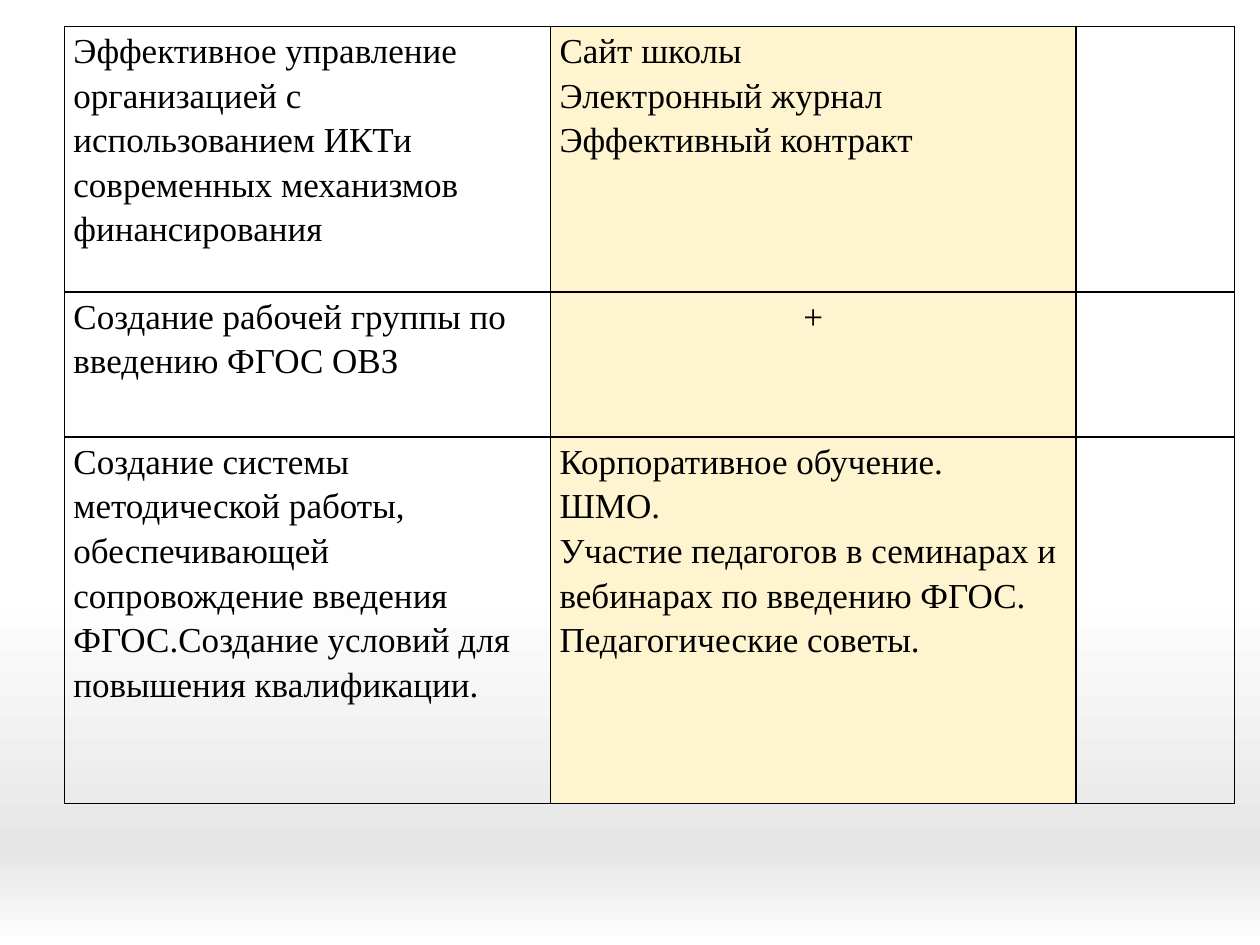
from lxml.etree import SubElement
from pptx import Presentation
from pptx.dml.color import RGBColor as Color
from pptx.enum.text import PP_ALIGN as Align
from pptx.oxml.ns import qn
from pptx.util import Cm, Pt

COLORS = {"text": "000000", "border": "000000", "cream": "FEF4CF",
          "white": "FFFFFF", "grey": "E6E6E6"}
FONT = {"name": "Times New Roman", "size": Pt(20), "bold": False}
MARGINS = {"margin_left": Cm(0.18), "margin_right": Cm(0.18),
           "margin_top": 0, "margin_bottom": 0}
TABLE_FLAGS = {"first_row": False, "horz_banding": False}
GRADIENT = [(0, "white"), (62, "white"), (90, "grey"), (100, "white")]
COLUMN_WIDTHS = [9.8, 10.59, 3.2]
ROW_HEIGHTS = [5.36, 2.92, 7.39]
ROWS = [
    (["Эффективное управление организацией с использованием ИКТи "
      "современных механизмов финансирования"],
     ["Сайт школы", "Электронный журнал", "Эффективный контракт"], []),
    (["Создание рабочей группы по введению ФГОС ОВЗ"], ["+"], []),
    (["Создание системы методической работы, обеспечивающей сопровождение "
      "введения ФГОС.Создание условий для повышения квалификации."],
     ["Корпоративное обучение.", "ШМО.",
      "Участие педагогов в семинарах и вебинарах по введению ФГОС.",
      "Педагогические советы."], []),
]


def apply(target, values):
    """Set every attribute in values on the target."""
    for name, value in values.items():
        setattr(target, name, value)


def add_color(parent, color):
    """Append a named palette colour to an XML element."""
    SubElement(parent, qn("a:srgbClr"), val=COLORS[color])


def paint_background(slide):
    """Give the slide its vertical gradient."""
    fill = slide.background.fill
    fill.gradient()
    fill.gradient_angle = 270
    stops = next(slide.element.iter(qn("a:gsLst")))
    for stop in list(stops):
        stops.remove(stop)
    for position, color in GRADIENT:
        add_color(SubElement(stops, qn("a:gs"), pos=str(position * 1000)), color)


def add_borders(cell):
    """Draw a thin line on all four sides of a cell."""
    properties = cell._tc.get_or_add_tcPr()
    for side in ("lnL", "lnR", "lnT", "lnB"):
        line = SubElement(properties, qn(f"a:{side}"), w=str(Pt(1)))
        add_color(SubElement(line, qn("a:solidFill")), "border")


def write_cell(cell, lines):
    """Write one paragraph per line into a cell."""
    cell.text = "\n".join(lines)
    for paragraph in cell.text_frame.paragraphs:
        paragraph.line_spacing = 1.15
        paragraph.alignment = Align.CENTER if lines == ["+"] else Align.LEFT
        apply(paragraph.font, FONT)
        paragraph.font.color.rgb = Color.from_string(COLORS["text"])


def format_cell(cell, color):
    """Set the margins, borders and fill of a cell."""
    apply(cell, MARGINS)
    add_borders(cell)
    if color:
        cell.fill.solid()
        cell.fill.fore_color.rgb = Color.from_string(COLORS[color])
    else:
        cell.fill.background()


def add_plan_table(slide):
    """Add the table of measures and results."""
    table = slide.shapes.add_table(
        len(ROWS), len(COLUMN_WIDTHS), Cm(1.3), Cm(0.53),
        Cm(sum(COLUMN_WIDTHS)), Cm(sum(ROW_HEIGHTS))).table
    apply(table, TABLE_FLAGS)
    for column, width in zip(table.columns, COLUMN_WIDTHS):
        column.width = Cm(width)
    for row, height, texts in zip(table.rows, ROW_HEIGHTS, ROWS):
        row.height = Cm(height)
        for cell, lines, color in zip(row.cells, texts, (None, "cream", None)):
            write_cell(cell, lines)
            format_cell(cell, color)


def main():
    """Build the slide and save it."""
    presentation = Presentation()
    apply(presentation, {"slide_width": Cm(25.4), "slide_height": Cm(19.05)})
    slide = presentation.slides.add_slide(presentation.slide_layouts[6])
    paint_background(slide)
    add_plan_table(slide)
    presentation.save("out.pptx")


if __name__ == "__main__":
    main()
